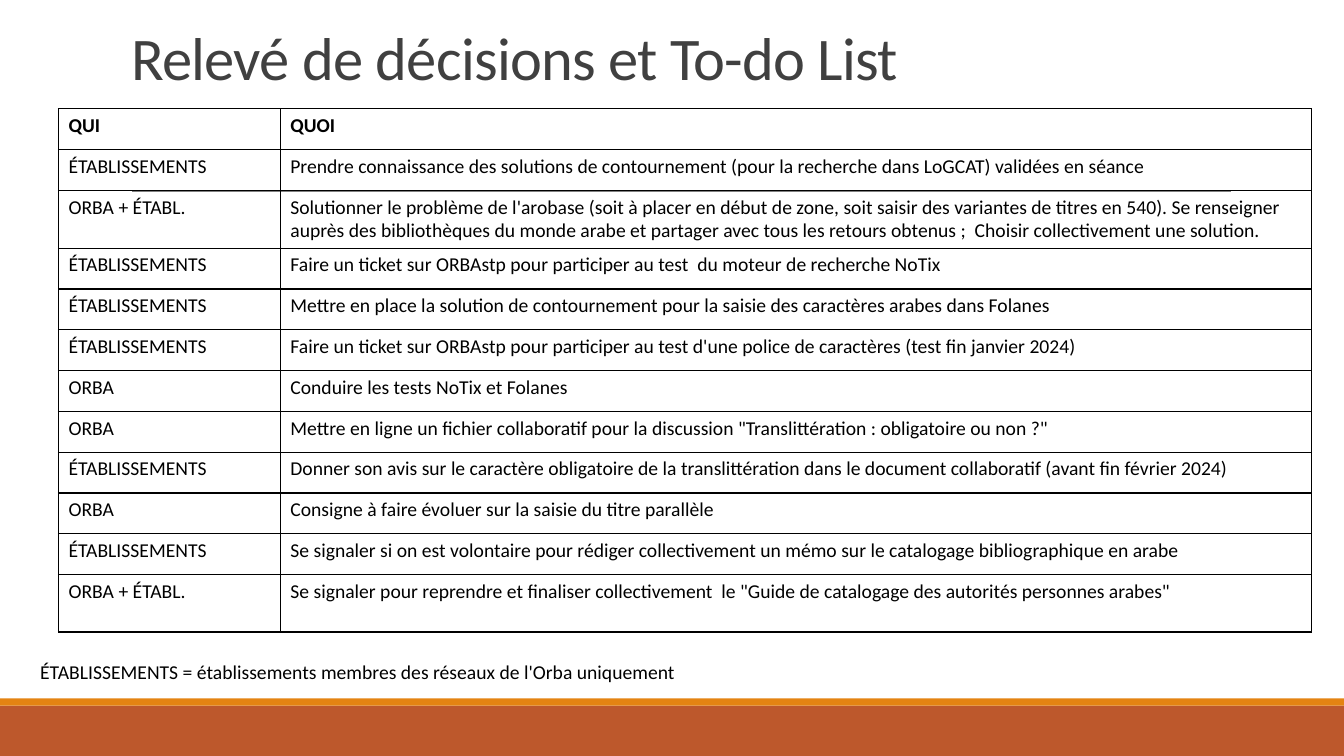
from lxml.etree import SubElement
from pptx import Presentation
from pptx.dml.color import RGBColor
from pptx.enum.shapes import MSO_CONNECTOR as Connector, MSO_SHAPE as Shape
from pptx.enum.text import MSO_ANCHOR as Anchor, MSO_AUTO_SIZE as AutoSize, PP_ALIGN as Align
from pptx.oxml import parse_xml
from pptx.oxml.ns import nsdecls, qn
from pptx.util import Inches, Pt

BLACK = RGBColor(0x00, 0x00, 0x00)
CHARCOAL = RGBColor(0x40, 0x40, 0x40)
GRAY = RGBColor(0x80, 0x80, 0x80)
ORANGE = RGBColor(0xE4, 0x83, 0x12)
RUST = RGBColor(0xBD, 0x58, 0x2C)

MEMBERS, AGENCY, BOTH = "ÉTABLISSEMENTS", "ORBA", "ORBA + ÉTABL."
DECISIONS = [
    ("QUI", "QUOI"),
    (MEMBERS, "Prendre connaissance des solutions de contournement (pour la recherche "
              "dans LoGCAT) validées en séance"),
    (BOTH, "Solutionner le problème de l'arobase (soit à placer en début de zone, soit saisir "
           "des variantes de titres en 540). Se renseigner auprès des bibliothèques du monde "
           "arabe et partager avec tous les retours obtenus ;  Choisir collectivement une solution."),
    (MEMBERS, "Faire un ticket sur ORBAstp pour participer au test  du moteur de recherche NoTix"),
    (MEMBERS, "Mettre en place la solution de contournement pour la saisie des caractères "
              "arabes dans Folanes"),
    (MEMBERS, "Faire un ticket sur ORBAstp pour participer au test d'une police de caractères "
              "(test fin janvier 2024)"),
    (AGENCY, "Conduire les tests NoTix et Folanes"),
    (AGENCY, "Mettre en ligne un fichier collaboratif pour la discussion "
             "\"Translittération : obligatoire ou non ?\""),
    (MEMBERS, "Donner son avis sur le caractère obligatoire de la translittération dans le "
              "document collaboratif (avant fin février 2024)"),
    (AGENCY, "Consigne à faire évoluer sur la saisie du titre parallèle"),
    (MEMBERS, "Se signaler si on est volontaire pour rédiger collectivement un mémo sur le "
              "catalogage bibliographique en arabe"),
    (BOTH, "Se signaler pour reprendre et finaliser collectivement  le "
           "\"Guide de catalogage des autorités personnes arabes\""),
]
TALL_ROWS = {2, len(DECISIONS) - 1}
TALL = 0.57


class SlideBuilder:
    """Holds the text style and the current slide."""

    def __init__(self, page, font="Calibri", size=14):
        self.page = page
        self.style = {"name": font, "size": Pt(size), "bold": False}

    def add_text(self, frame, text, color=BLACK, **changes):
        para = frame.paragraphs[0]
        para.alignment = Align.LEFT
        span = para.add_run()
        span.text = text
        for name, value in {**self.style, **changes}.items():
            setattr(span.font, name, value)
        span.font.color.rgb = color
        return para, span

    def title(self, text, left, top, width, height):
        box = self.page.shapes.title
        place = {"left": left, "top": top, "width": width, "height": height}
        for name, value in place.items():
            setattr(box, name, Inches(value))
        frame = box.text_frame
        layout = {"word_wrap": True, "auto_size": AutoSize.NONE, "vertical_anchor": Anchor.BOTTOM}
        for name, value in layout.items():
            setattr(frame, name, value)
        para, span = self.add_text(frame, text, CHARCOAL, size=Pt(43.2))
        para.line_spacing = 0.85
        span.font._element.set("spc", "-50")

    def band(self, color, top, height):
        bar = self.page.shapes.add_shape(
            Shape.RECTANGLE, 0, Inches(top), Inches(13.33), Inches(height))
        bar.shadow.inherit = False
        bar.fill.solid()
        bar.fill.fore_color.rgb = color
        bar.line.fill.background()

    def rule(self, left, right, y):
        line = self.page.shapes.add_connector(
            Connector.STRAIGHT, Inches(left), Inches(y), Inches(right), Inches(y))
        line.line.color.rgb = GRAY
        line.line.width = Pt(0.5)
        SubElement(line._element.spPr, qn("a:effectLst"))

    def note(self, text, left, top, width, height):
        box = self.page.shapes.add_textbox(
            Inches(left), Inches(top), Inches(width), Inches(height))
        box.text_frame.word_wrap = True
        self.add_text(box.text_frame, text)

    def border(self, cell):
        for index, side in enumerate(("lnL", "lnR", "lnT", "lnB")):
            cell._tc.get_or_add_tcPr().insert(index, parse_xml(
                f'<a:{side} {nsdecls("a")} w="{Pt(1)}"><a:solidFill>'
                f'<a:srgbClr val="{BLACK}"/></a:solidFill></a:{side}>'))

    def table(self, rows, widths, left, top, height):
        grid = self.page.shapes.add_table(
            len(rows), len(widths), Inches(left), Inches(top),
            Inches(sum(widths)), Inches(height)).table
        grid.first_row = grid.horz_banding = False
        for column, width in zip(grid.columns, widths):
            column.width = Inches(width)
        normal = (height - TALL * len(TALL_ROWS)) / (len(rows) - len(TALL_ROWS))
        for r, texts in enumerate(rows):
            grid.rows[r].height = Inches(TALL if r in TALL_ROWS else normal)
            for c, text in enumerate(texts):
                cell = grid.cell(r, c)
                cell.fill.background()
                self.border(cell)
                self.add_text(cell.text_frame, text, bold=r == 0)


def main():
    deck = Presentation()
    deck.slide_width, deck.slide_height = Inches(13.33), Inches(7.5)
    slide = SlideBuilder(deck.slides.add_slide(deck.slide_layouts[5]))

    # Footer bands and title rule
    slide.band(RUST, 7, 0.5)
    slide.band(ORANGE, 6.93, 0.07)
    slide.rule(1.31, 12.21, 1.9)

    # Title, decisions and footnote
    slide.title("Relevé de décisions et To-do List", 1.2, 0.31, 11, 0.66)
    slide.table(DECISIONS, (2.2, 10.23), 0.58, 1.08, 5.19)
    slide.note("ÉTABLISSEMENTS = établissements membres des réseaux de l'Orba uniquement",
               0.3, 6.5, 6.55, 0.34)

    deck.save("out.pptx")


if __name__ == "__main__":
    main()
